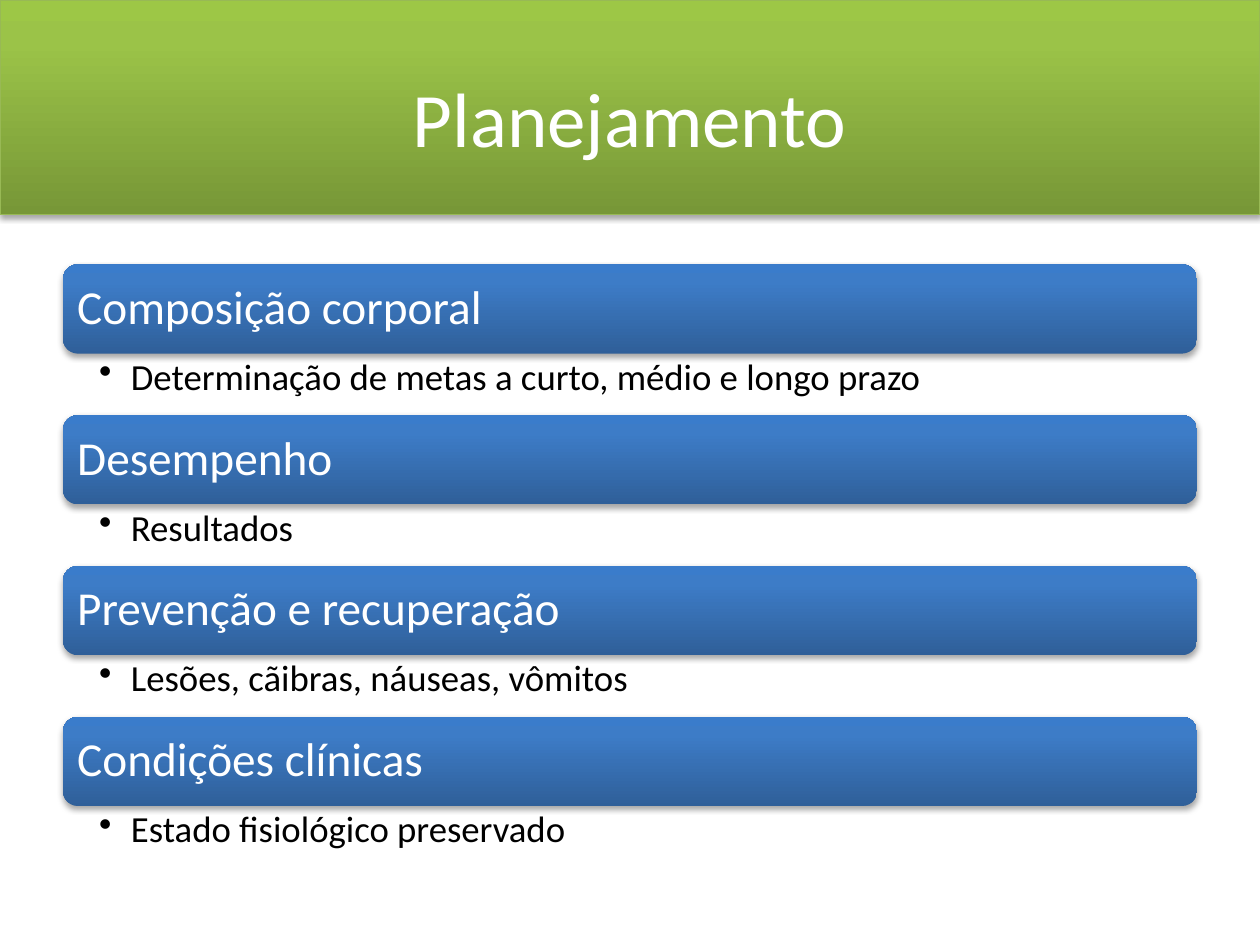
from copy import deepcopy

from lxml import etree
from pptx import Presentation
from pptx.dml.color import RGBColor
from pptx.enum import shapes, text
from pptx.oxml import ns
from pptx.util import Cm, Pt

TOPICS = [
    ("Composição corporal", "Determinação de metas a curto, médio e longo prazo"),
    ("Desempenho", "Resultados"),
    ("Prevenção e recuperação", "Lesões, cãibras, náuseas, vômitos"),
    ("Condições clínicas", "Estado fisiológico preservado"),
]
GREEN = [(0, "779737"), (0.8, "9BC348"), (1, "9DC746")]
BLUE = [(0, "2F5F99"), (0.8, "3D7CC7"), (1, "3A7CCB")]


def color(hex_value):
    return RGBColor.from_string(hex_value)


def sub(parent, tag, **attributes):
    return etree.SubElement(parent, ns.qn(tag), attributes)


def add_panel(slide, kind, box, stops):
    """Shape with an upward gradient and a soft shadow below it."""
    panel = slide.shapes.add_shape(kind, *map(Cm, box))
    panel.fill.gradient()
    panel.fill.gradient_angle = 90
    first_stop = panel.fill._fill._gradFill.gsLst[0]
    first_stop.addnext(deepcopy(first_stop))
    for stop, (position, hex_value) in zip(panel.fill.gradient_stops, stops):
        stop.position = position
        stop.color.rgb = color(hex_value)
    panel.line.fill.background()

    panel.shadow.inherit = False
    effects = panel._element.spPr.find(ns.qn("a:effectLst"))
    shadow = sub(effects, "a:outerShdw", blurRad="40000", dist="23000",
                 dir="5400000", rotWithShape="0")
    black = sub(shadow, "a:srgbClr", val="000000")
    sub(black, "a:alpha", val="35000")
    return panel


def write(shape, words, size, hex_value, insets, anchor, align):
    """Fill a shape with one paragraph; insets are left, top, right, bottom."""
    frame = shape.text_frame
    frame.word_wrap = True
    frame.vertical_anchor = anchor
    (frame.margin_left, frame.margin_top,
     frame.margin_right, frame.margin_bottom) = map(Cm, insets)
    paragraph = frame.paragraphs[0]
    paragraph.text = words
    paragraph.alignment = align
    paragraph.font.name = "Calibri"
    paragraph.font.size = Pt(size)
    paragraph.font.color.rgb = color(hex_value)
    return paragraph


def add_header(slide, left, top, width, height):
    # Green band
    band = add_panel(slide, shapes.MSO_SHAPE.RECTANGLE, (left, top, width, height), GREEN)
    band.line.color.rgb = color("98B955")
    band.line.width = Pt(0.75)

    # Title
    title = slide.shapes.add_textbox(Cm(left + 1.27), Cm(top + 0.76),
                                     Cm(width - 2.54), Cm(3.18))
    write(title, "Planejamento", 44, "FFFFFF", (0.25, 0.13, 0.25, 0.13),
          text.MSO_ANCHOR.MIDDLE, text.PP_ALIGN.CENTER)


def add_topic(slide, heading, detail, left, top, width, height):
    bar_height = 1.8

    # Heading bar
    bar = add_panel(slide, shapes.MSO_SHAPE.ROUNDED_RECTANGLE,
                    (left, top, width, bar_height), BLUE)
    paragraph = write(bar, heading, 27, "FFFFFF", (0.2, 0.2, 0.2, 0.2),
                      text.MSO_ANCHOR.MIDDLE, text.PP_ALIGN.LEFT)
    paragraph.line_spacing = 0.9

    # Bulleted detail
    note = slide.shapes.add_textbox(Cm(left), Cm(top + bar_height),
                                    Cm(width), Cm(height - bar_height))
    paragraph = write(note, detail, 21, "000000", (0.73, 0.1, 0.53, 0.1),
                      text.MSO_ANCHOR.TOP, text.PP_ALIGN.LEFT)
    paragraph.level = 1
    paragraph.line_spacing = 0.9
    properties = paragraph._p.get_or_add_pPr()
    properties.set("marL", str(Cm(0.64)))
    properties.set("indent", str(-Cm(0.64)))
    bullet = etree.Element(ns.qn("a:buChar"), char="•")
    properties.find(ns.qn("a:lnSpc")).addnext(bullet)


def add_topics(slide, left, top, width, height):
    row_height = height / len(TOPICS)
    for row, (heading, detail) in enumerate(TOPICS):
        add_topic(slide, heading, detail, left, top + row * row_height, width, row_height)


def main():
    deck = Presentation()
    deck.slide_width, deck.slide_height = Cm(25.4), Cm(19.05)
    slide = deck.slides.add_slide(deck.slide_layouts[6])
    add_header(slide, 0, 0, 25.4, 4.32)
    add_topics(slide, 1.27, 5.33, 22.86, 12.16)
    deck.save("out.pptx")


if __name__ == "__main__":
    main()
